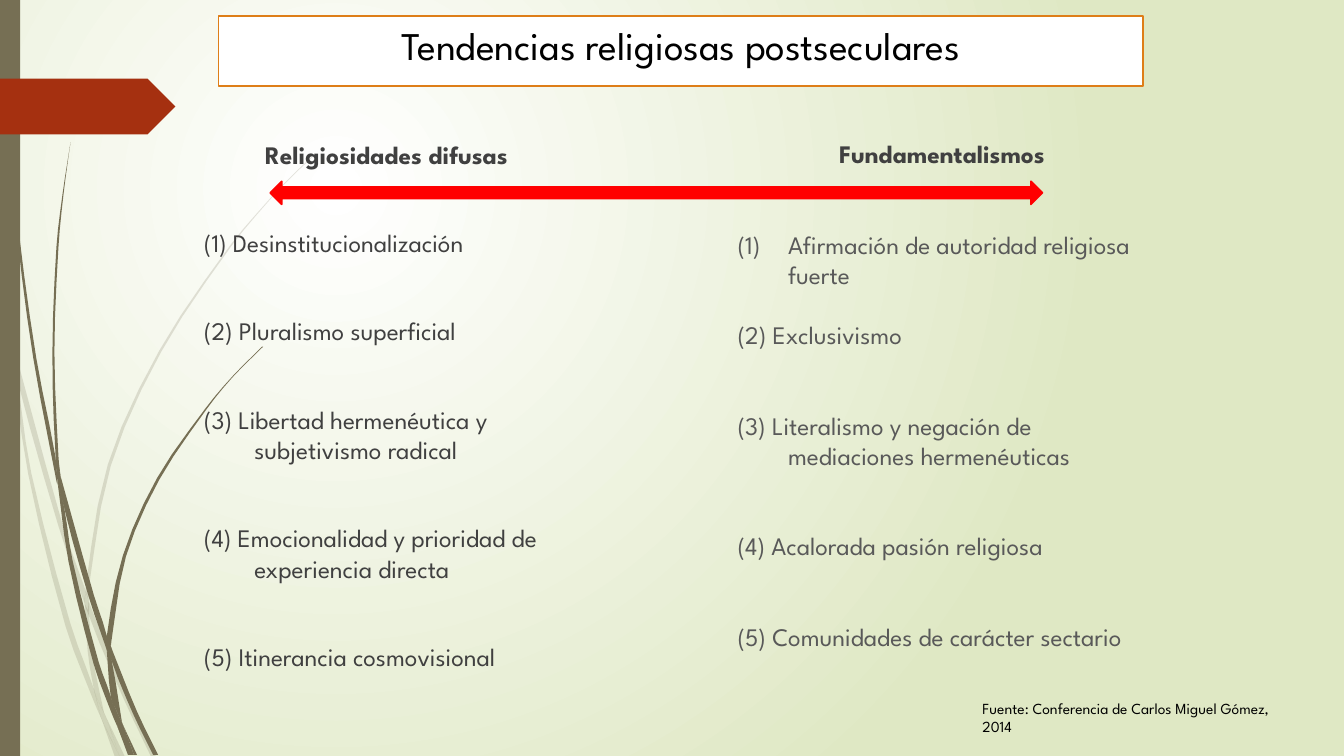
import pptx
import pptx.dml.color
import pptx.enum.shapes
import pptx.enum.text
import pptx.oxml
import pptx.oxml.ns
import pptx.util

Cm = pptx.util.Cm
Pt = pptx.util.Pt
Kind = pptx.enum.shapes.MSO_SHAPE
Align = pptx.enum.text.PP_ALIGN

FONT = "League Spartan"
OLIVE = "766F54"
INCH = 2.54
STEPS = 3
LINE = 21.5
HANG = Cm(1.27)

PALE = [
    ([(0, 2.99), (0.1, 3.44), (0.11, 3.5)], [(0, 2.82), (0.09, 3.22), (0.11, 3.5)]),
    ([(0.14, 3.45), (0.17, 3.76), (0.58, 5.22), (0.84, 5.99)], [(0.14, 3.45), (0.62, 5.2), (0.85, 5.86)]),
    ([(0.88, 5.96), (0.88, 6.1), (1.23, 6.94), (1.5, 7.51)],
     [(0.88, 5.96), (0.92, 6.07), (1.27, 6.92), (1.55, 7.51)]),
    ([(1.05, 7.11), (1.19, 7.51)], [(1.05, 7.11), (1.24, 7.51)]),
    ([(0.11, 3.5), (0.28, 4.7), (0.65, 6.21), (0.92, 6.93), (1.01, 7.14)],
     [(0.11, 3.5), (0.17, 3.76), (0.31, 4.69), (0.7, 6.19), (0.93, 6.83), (0.99, 7.07), (1.01, 7.14)]),
    ([(0.84, 5.99), (0.87, 6.46), (0.93, 6.83), (0.96, 6.92), (1.05, 7.11)],
     [(0.84, 5.99), (0.88, 6.08), (0.91, 6.46), (1.03, 7.06), (1.05, 7.11)]),
    ([(3.12, 1.53), (2.89, 1.75), (2.68, 1.97), (2.28, 2.44), (1.58, 3.48), (1.07, 4.61), (0.85, 5.84),
      (0.88, 5.96)],
     [(3.12, 1.54), (2.9, 1.75), (2.68, 1.98), (2.29, 2.45), (1.6, 3.49), (1.1, 4.62), (0.88, 5.84),
      (0.88, 5.96)]),
    ([(1.01, 7.14), (1.14, 7.51)], [(1.01, 7.14), (1.19, 7.51)]),
    ([(0.85, 5.86), (0.84, 5.99), (0.88, 6.1)], [(0.85, 5.86), (0.88, 5.96), (0.88, 6.1)]),
    ([(0.93, 6.83), (0.99, 7.07), (1.01, 7.14), (1.19, 7.51)],
     [(0.93, 6.83), (0.96, 6.92), (1.05, 7.11), (1.19, 7.51)]),
]
DARK = [
    ([(0.03, 0), (0.04, 0.48), (0.07, 1.1), (0.17, 2.33), (0.33, 3.55), (0.56, 4.77), (0.57, 4.81)],
     [(0.04, 0), (0.05, 0.48), (0.08, 1.09), (0.19, 2.32), (0.36, 3.55), (0.55, 4.53), (0.57, 4.81)]),
    ([(0.6, 4.72), (0.64, 5.05), (0.88, 5.92), (1.06, 6.45)],
     [(0.6, 4.72), (0.93, 5.9), (1.06, 6.31), (1.06, 6.45)]),
    ([(1.1, 6.41), (1.11, 6.56), (1.32, 7.08), (1.52, 7.49)],
     [(1.1, 6.41), (1.13, 6.49), (1.36, 7.06), (1.57, 7.49)]),
    ([(0.57, 4.77), (0.68, 5.57), (0.93, 6.59), (1.11, 7.08), (1.17, 7.22)],
     [(0.57, 4.77), (0.64, 5.05), (0.72, 5.56), (0.98, 6.57), (1.1, 6.91), (1.17, 7.22)]),
    ([(0.7, 1.41), (0.62, 1.93), (0.56, 2.45), (0.52, 3.49), (0.55, 4.49), (0.6, 4.72)],
     [(0.7, 1.41), (0.63, 1.93), (0.58, 2.45), (0.54, 3.49), (0.58, 4.53), (0.6, 4.72)]),
    ([(1.22, 7.19), (1.33, 7.49)], [(1.22, 7.19), (1.36, 7.49)]),
    ([(0.55, 4.49), (0.57, 4.77), (0.64, 5.05)], [(0.55, 4.49), (0.6, 4.72), (0.64, 5.05)]),
    ([(2.6, 3.44), (2.31, 3.73), (2.04, 4.05), (1.56, 4.74), (1.22, 5.51), (1.06, 6.31), (1.1, 6.41)],
     [(2.61, 3.44), (2.31, 3.74), (2.05, 4.06), (1.58, 4.76), (1.25, 5.52), (1.11, 6.33), (1.1, 6.41)]),
    ([(1.17, 7.22), (1.27, 7.49)], [(1.17, 7.22), (1.31, 7.49)]),
    ([(1.06, 6.45), (1.1, 6.91), (1.16, 7.06), (1.22, 7.19)],
     [(1.06, 6.45), (1.11, 6.56), (1.21, 7.16), (1.22, 7.19)]),
    ([(1.06, 6.31), (1.06, 6.45), (1.11, 6.56)], [(1.06, 6.31), (1.1, 6.41), (1.11, 6.56)]),
    ([(1.1, 6.91), (1.17, 7.22), (1.3, 7.49)], [(1.1, 6.91), (1.16, 7.06), (1.22, 7.19), (1.33, 7.49)]),
]

DIFFUSE = [
    "(1) Desinstitucionalización",
    "(2) Pluralismo superficial",
    "(3) Libertad hermenéutica y subjetivismo radical",
    "(4) Emocionalidad y prioridad de experiencia directa",
    "(5) Itinerancia cosmovisional",
]
STRICT = [
    "Afirmación de autoridad religiosa fuerte",
    "(2) Exclusivismo",
    "(3) Literalismo y negación de mediaciones hermenéuticas",
    "(4) Acalorada pasión religiosa",
    "(5) Comunidades de carácter sectario",
]


def tint(code):
    return pptx.dml.color.RGBColor.from_string(code)


def make(tag, rest):
    return pptx.oxml.parse_xml(f'<a:{tag} {pptx.oxml.ns.nsdecls("a")} {rest}')


def paint(shape, fill, line=None):
    shape.shadow.inherit = False
    shape.fill.solid()
    shape.fill.fore_color.rgb = tint(fill)
    if line:
        shape.line.color.rgb = tint(line)
        shape.line.width = Pt(1.25)
    else:
        shape.line.fill.background()
    return shape


def block(slide, kind, area, fill, line=None):
    return paint(slide.shapes.add_shape(kind, *map(Cm, area)), fill, line)


def slope(edge, i):
    (xa, ya), (xb, yb) = edge[max(i - 1, 0)], edge[min(i + 1, len(edge) - 1)]
    return (xb - xa) / (yb - ya)


def curve(edge):
    dots = [edge[0]]
    for i, ((xa, ya), (xb, yb)) in enumerate(zip(edge, edge[1:])):
        rise = yb - ya
        for step in range(1, STEPS + 1):
            t = step / STEPS
            bend = t * (1 - t) ** 2 * slope(edge, i) - t * t * (1 - t) * slope(edge, i + 1)
            dots.append((xa + (xb - xa) * t * t * (3 - 2 * t) + rise * bend, ya + rise * t))
    return dots


def grass(slide, blades, alpha=100):
    group = slide.shapes.add_group_shape()
    for left, right in blades:
        dots = [(Cm(x * INCH), Cm(y * INCH)) for x, y in curve(left) + curve(right)[::-1]]
        form = group.shapes.build_freeform(*dots[0])
        form.add_line_segments(dots[1:], close=True)
        shape = paint(form.convert_to_shape(), OLIVE)
        if alpha < 100:
            shade = next(shape._element.spPr.iter(pptx.oxml.ns.qn("a:srgbClr")))
            shade.append(make("alpha", f'val="{alpha * 1000}"/>'))


def glow(slide):
    fill = slide.background.fill
    fill.gradient()
    for stop, code, place in zip(fill.gradient_stops, ("FFFFFF", "DFE8C4"), (0, 1)):
        stop.color.rgb = tint(code)
        stop.position = place
    grad = next(slide._element.iter(pptx.oxml.ns.qn("a:gradFill")))
    ring = make("path", 'path="circle"><a:fillToRect l="50000" t="50000" r="100000" b="100000"/></a:path>')
    grad.replace(grad.find(pptx.oxml.ns.qn("a:lin")), ring)


def style(para, size, code, bold=False, align=Align.LEFT):
    para.alignment = align
    for run in para.runs:
        run.font.name = FONT
        run.font.size = Pt(size)
        run.font.bold = bold
        run.font.color.rgb = tint(code)


def note(slide, area, text):
    frame = slide.shapes.add_textbox(*map(Cm, area)).text_frame
    frame.word_wrap = True
    frame.text = text
    return frame


def column(slide, area, head, items, gaps, code):
    frame = note(slide, area, head)
    style(frame.paragraphs[0], 18, "404040", True, Align.CENTER)
    for item, gap in zip(items, gaps):
        para = frame.add_paragraph()
        para.text = item
        para.space_before = Pt(gap)
        style(para, 18, code)
        props = para._p.get_or_add_pPr()
        props.set("marL", str(HANG))
        props.set("indent", str(-HANG))
    return frame


def main():
    deck = pptx.Presentation()
    deck.slide_width, deck.slide_height = Cm(33.87), Cm(19.05)
    slide = deck.slides.add_slide(deck.slide_layouts[6])
    glow(slide)
    grass(slide, PALE, 20)
    grass(slide, DARK)
    block(slide, Kind.RECTANGLE, (0, 0, 0.51, 19.05), OLIVE)
    block(slide, Kind.PENTAGON, (0, 1.98, 4.42, 1.41), "A53010")

    title = block(slide, Kind.RECTANGLE, (5.51, 0.4, 23.29, 1.77), "FFFFFF", "DE7E18").text_frame
    title.text = "Tendencias religiosas postseculares"
    title.vertical_anchor = pptx.enum.text.MSO_ANCHOR.TOP
    style(title.paragraphs[0], 28, "000000", align=Align.CENTER)

    column(slide, (4.89, 3.38, 9.7, 14.35), "Religiosidades difusas", DIFFUSE, [LINE + 20] * 5, "404040")
    strict = column(slide, (18.34, 3.37, 10.8, 14.71), "Fundamentalismos",
                    STRICT, [LINE * n for n in (2, 1, 2, 2, 2)], "595959")
    strict.paragraphs[1]._p.get_or_add_pPr().append(make("buAutoNum", 'type="arabicParenBoth"/>'))
    block(slide, Kind.LEFT_RIGHT_ARROW, (6.81, 4.57, 19.46, 0.58), "FF0000", "FF0000")
    source = note(slide, (24.51, 17.48, 7.92, 1.19), "Fuente: Conferencia de Carlos Miguel Gómez, 2014")
    style(source.paragraphs[0], 11, "000000")
    deck.save("out.pptx")


if __name__ == "__main__":
    main()
